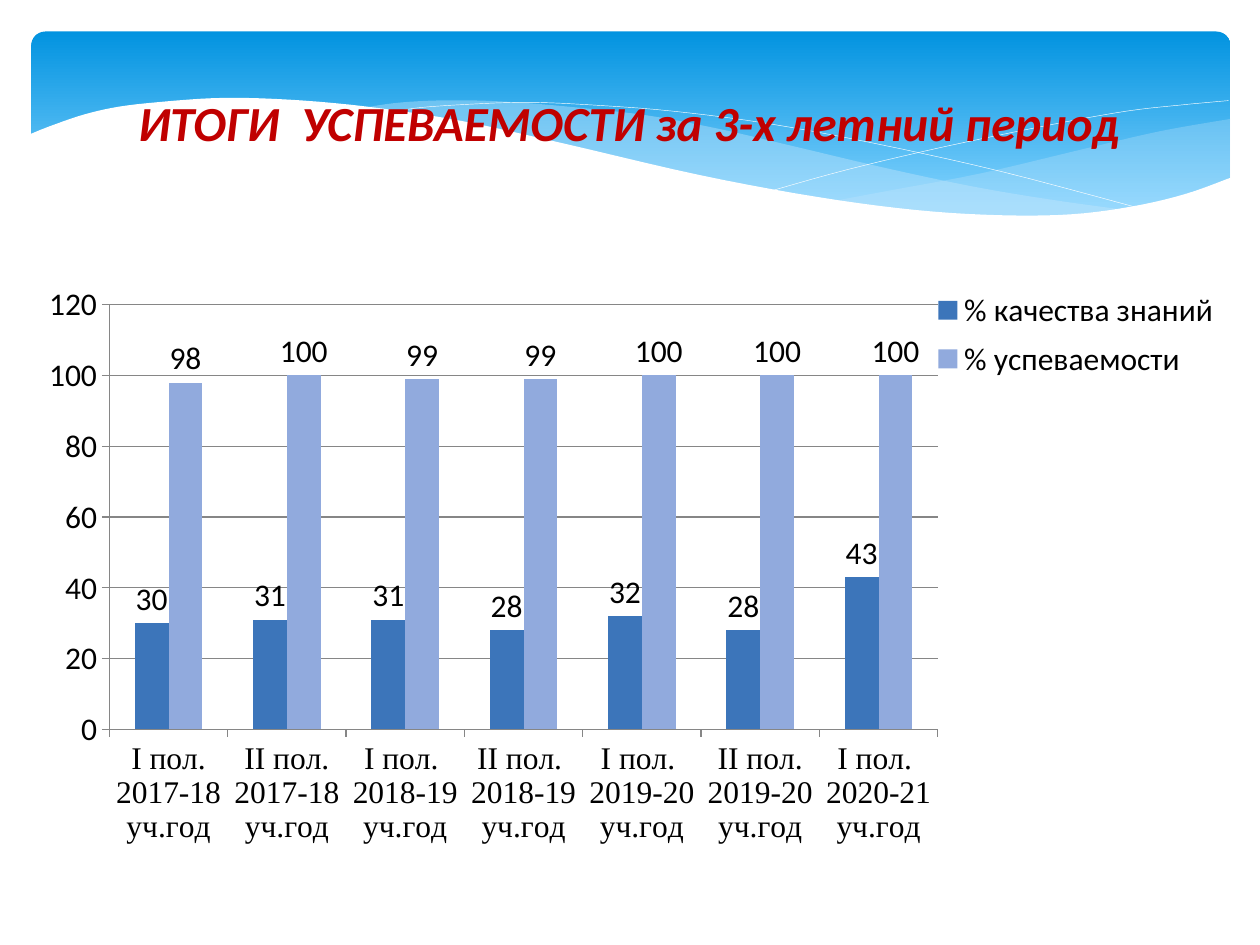
from lxml import etree
from pptx import Presentation
from pptx.chart.data import CategoryChartData
from pptx.dml.color import RGBColor
from pptx.enum.chart import XL_CHART_TYPE, XL_LABEL_POSITION, XL_LEGEND_POSITION, XL_TICK_MARK
from pptx.enum.shapes import MSO_SHAPE
from pptx.enum.text import MSO_ANCHOR, PP_ALIGN
from pptx.oxml import parse_xml
from pptx.oxml.ns import nsdecls, qn
from pptx.util import Pt

FONT = "Calibri"

# Curve points are in points, measured from the banner's top left corner.
RIGHT_WAVE_TOP = [(685, 50), (645, 57), (602, 67), (543, 81), (490, 91), (458, 97)]
RIGHT_WAVE_BOTTOM = [(458, 97), (500, 102), (544, 106), (583, 106), (616, 102),
                     (645, 97), (665, 91), (685, 84)]
MIDDLE_WAVE_TOP = [(625, 102), (585, 96.5), (540, 89), (490, 78.5), (435, 65.5),
                   (392, 55.5), (352, 48), (317, 44), (284, 41), (256, 39.5),
                   (230, 39.5), (207, 41), (188, 44)]
MIDDLE_WAVE_BOTTOM = [(188, 44), (228, 49.5), (273, 58), (305, 65.5), (364, 79),
                      (415, 90), (461, 98), (502, 103), (539, 106), (571, 106.5),
                      (599, 105), (625, 102)]
FALLING_LINE = [(204, 47), (218, 44), (243, 42), (282, 40.5), (320, 42), (366, 45.5),
                (420, 52.5), (482, 64), (554, 80), (635, 101.5)]
RISING_LINE = [(423, 91), (466, 79), (521, 66), (584, 53), (626, 45.5), (657, 42),
               (684, 39.5)]
WHITE_WAVE = [(685.5, 83.5), (659, 93), (629, 100), (594, 104.5), (553, 105),
              (505, 102), (448.5, 94.5), (381.5, 82), (304, 64), (245, 51), (192, 43),
              (147.5, 39), (109, 38), (77, 40), (50, 43), (30, 47.5), (11, 54), (-1.5, 59)]
WHITE_BASE = [(-1.5, 143), (685.5, 143)]

CATEGORIES = ["I пол. 2017-18 уч.год", "II пол. 2017-18 уч.год", "I пол.  2018-19 уч.год",
              "II пол.  2018-19 уч.год", "I пол.  2019-20 уч.год", "II пол. 2019-20 уч.год",
              "I пол.  2020-21 уч.год"]
SERIES = [("% качества знаний", [30, 31, 31, 28, 32, 28, 43], "3C75BA"),
          ("% успеваемости", [98, 100, 99, 99, 100, 100, 100], "91AADD")]


def rgb(value):
    return RGBColor.from_string(value)


def smooth(points, steps=5):
    """Catmull-Rom curve through the points, as a denser list of points."""
    padded = [points[0], *points, points[-1]]
    curve = []
    for a, b, c, d in zip(padded, padded[1:], padded[2:], padded[3:]):
        for i in range(steps):
            t = i / steps
            curve.append(tuple(
                (2 * q + (r - p) * t + (2 * p - 5 * q + 4 * r - s) * t ** 2
                 + (3 * q - p - 3 * r + s) * t ** 3) / 2
                for p, q, r, s in zip(a, b, c, d)))
    return curve + [points[-1]]


def add_outline(s, x, y, points, fill=None, alpha=100):
    """Filled area when fill is given, otherwise an open white hairline."""
    pts = [(Pt(x + px), Pt(y + py)) for px, py in points]
    builder = s.shapes.build_freeform(*pts[0])
    builder.add_line_segments(pts[1:], close=fill is not None)
    sp = builder.convert_to_shape()
    sp.shadow.inherit = False
    if fill is None:
        sp.fill.background()
        sp.line.color.rgb = rgb("FFFFFF")
        sp.line.width = Pt(0.25)
        return
    sp.line.fill.background()
    sp.fill.solid()
    sp.fill.fore_color.rgb = rgb(fill)
    if alpha < 100:
        color = sp._element.spPr.find(qn("a:solidFill"))[0]
        etree.SubElement(color, qn("a:alpha")).set("val", str(alpha * 1000))


def add_banner(s, x, y, w, h):
    sp = s.shapes.add_shape(MSO_SHAPE.ROUNDED_RECTANGLE, Pt(x), Pt(y), Pt(w), Pt(h))
    sp.adjustments[0] = 0.07
    sp.shadow.inherit = False
    sp.line.fill.background()
    sp.fill.gradient()
    sp.fill.gradient_angle = 270
    stops = [(0, "0293E0"), (0.9, "83D3FE")]
    for stop, (position, color) in zip(sp.fill.gradient_stops, stops):
        stop.position = position
        stop.color.rgb = rgb(color)
    add_outline(s, x, y, smooth(RIGHT_WAVE_TOP) + smooth(RIGHT_WAVE_BOTTOM), "C6E7FC", 29)
    add_outline(s, x, y, smooth(MIDDLE_WAVE_TOP) + smooth(MIDDLE_WAVE_BOTTOM), "C6E7FC", 40)
    add_outline(s, x, y, smooth(FALLING_LINE))
    add_outline(s, x, y, smooth(RISING_LINE))
    add_outline(s, x, y, smooth(WHITE_WAVE) + WHITE_BASE, "FFFFFF")


def add_title(s, x, y, w, h):
    title = s.shapes.title
    title.left, title.top, title.width, title.height = Pt(x), Pt(y), Pt(w), Pt(h)
    tf = title.text_frame
    tf.word_wrap = True
    tf.vertical_anchor = MSO_ANCHOR.TOP
    p = tf.paragraphs[0]
    p.text = " ИТОГИ  УСПЕВАЕМОСТИ за 3-х летний период"
    p.alignment = PP_ALIGN.LEFT
    font = p.font
    font.name, font.size, font.bold, font.italic = FONT, Pt(28), True, True
    font.color.rgb = rgb("C00000")
    s.shapes._spTree.append(title._element)  # bring in front of the banner


def manual_layout(x, y, w, h, inner=False):
    target = '<c:layoutTarget val="inner"/>' if inner else ""
    sizes = "".join(f'<c:{tag} val="{value}"/>' for tag, value in zip("xywh", (x, y, w, h)))
    return parse_xml(f'<c:layout {nsdecls("c")}><c:manualLayout>{target}<c:xMode val="edge"/>'
                     f'<c:yMode val="edge"/>{sizes}</c:manualLayout></c:layout>')


def add_results_chart(s, x, y, w, h):
    data = CategoryChartData()
    data.categories = CATEGORIES
    for name, values, _ in SERIES:
        data.add_series(name, values)
    chart = s.shapes.add_chart(XL_CHART_TYPE.COLUMN_CLUSTERED, Pt(x), Pt(y), Pt(w), Pt(h),
                               data).chart
    chart.has_title = False
    chart.font.name, chart.font.size = FONT, Pt(18)
    chart.font.color.rgb = rgb("000000")

    plot = chart.plots[0]
    plot.gap_width, plot.overlap, plot.vary_by_categories = 150, 0, False
    for series, (_, _, color) in zip(plot.series, SERIES):
        series.format.fill.solid()
        series.format.fill.fore_color.rgb = rgb(color)
        labels = series.data_labels
        labels.show_value = True
        labels.position = XL_LABEL_POSITION.OUTSIDE_END

    for axis in (chart.category_axis, chart.value_axis):
        axis.major_tick_mark = XL_TICK_MARK.OUTSIDE
        axis.format.line.color.rgb = rgb("868686")
    font = chart.category_axis.tick_labels.font
    font.name, font.size = "Times New Roman", Pt(18)
    font.color.rgb = rgb("000000")
    value_axis = chart.value_axis
    value_axis.minimum_scale, value_axis.maximum_scale, value_axis.major_unit = 0, 120, 20
    value_axis.major_gridlines.format.line.color.rgb = rgb("868686")

    chart.has_legend = True
    legend = chart.legend
    legend.position = XL_LEGEND_POSITION.RIGHT
    legend.include_in_layout = False
    legend._element.find(qn("c:legendPos")).addnext(manual_layout(0.75, 0.01, 0.25, 0.18))
    plot_area = chart._chartSpace.chart.plotArea
    for old in plot_area.findall(qn("c:layout")):
        plot_area.remove(old)
    plot_area.insert(0, manual_layout(0.07, 0.05, 0.69, 0.71, inner=True))


def main():
    prs = Presentation()
    prs.slide_width, prs.slide_height = Pt(720), Pt(540)
    s = prs.slides.add_slide(prs.slide_layouts[5])
    add_banner(s, 18, 18, 685, 112)
    add_results_chart(s, 14.5, 157, 686, 342)
    add_title(s, 65.5, 49, 635, 41)
    prs.save("out.pptx")


if __name__ == "__main__":
    main()
